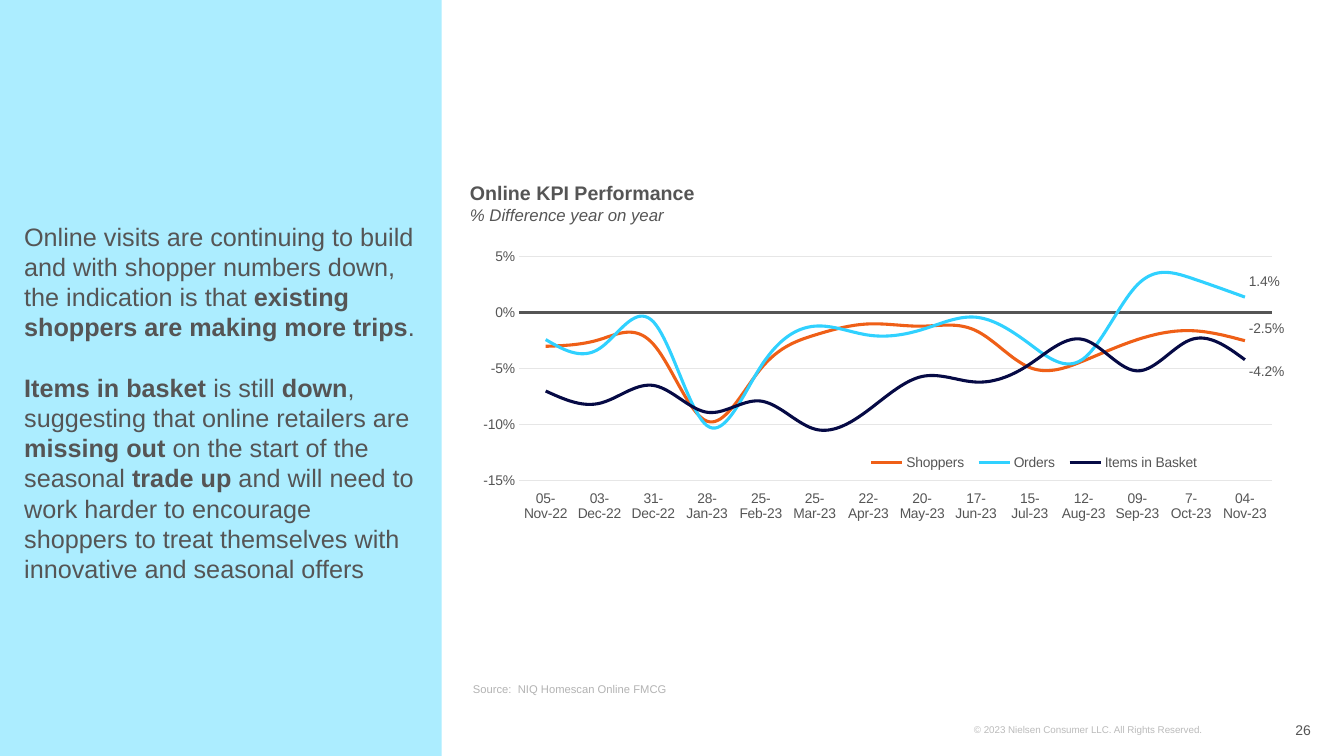
from lxml import etree
from pptx import Presentation
from pptx.chart.data import CategoryChartData
from pptx.dml.color import RGBColor
from pptx.enum.chart import XL_CHART_TYPE as CT, XL_LABEL_POSITION as LP
from pptx.enum.chart import XL_LEGEND_POSITION as LegendPos, XL_TICK_LABEL_POSITION as TickPos
from pptx.enum.chart import XL_TICK_MARK as Tick
from pptx.enum.shapes import MSO_SHAPE as Shape
from pptx.enum.text import MSO_ANCHOR as Anchor, PP_ALIGN as Align
from pptx.oxml.ns import qn
from pptx.util import Inches, Pt

FONT = "Arial"
W, H = 13.33, 7.5
COLORS = {
    "panel": "ACEDFF", "text": "555555", "source": "B3B3B3", "legal": "BBBBBB",
    "grid": "E6E6E6", "Shoppers": "EF5F17", "Orders": "30D1FF", "Items in Basket": "060A45",
}
DATES = [
    "05-Nov-22", "03-Dec-22", "31-Dec-22", "28-Jan-23", "25-Feb-23", "25-Mar-23", "22-Apr-23",
    "20-May-23", "17-Jun-23", "15-Jul-23", "12-Aug-23", "09-Sep-23", "7-Oct-23", "04-Nov-23",
]
KPIS = {
    "Shoppers": [-3.0, -2.4, -2.8, -9.7, -5.0, -2.0, -1.0, -1.2, -1.6, -4.9, -4.3, -2.4, -1.6, -2.5],
    "Orders": [-2.4, -3.2, -0.8, -10.1, -4.8, -1.2, -2.0, -1.5, -0.4, -2.8, -4.1, 2.5, 3.1, 1.4],
    "Items in Basket": [-7.0, -8.1, -6.5, -8.9, -7.9, -10.4, -8.7, -5.7, -6.2, -4.6, -2.4, -5.2, -2.4, -4.2],
}
LABEL_SHIFT = {"Shoppers": -0.03, "Orders": -0.04, "Items in Basket": 0.03}
MESSAGE = [
    [("Online visits are continuing to build and with shopper numbers down, the indication is that ", False),
     ("existing shoppers are making more trips", True), (".", False)],
    [("Items in basket ", True), ("is still ", False), ("down", True),
     (", suggesting that online retailers are ", False), ("missing out ", True),
     ("on the start of the seasonal ", False), ("trade up ", True),
     ("and will need to work harder to encourage shoppers to treat themselves with "
      "innovative and seasonal offers", False)],
]


def rgb(name):
    return RGBColor.from_string(COLORS[name])


def style(font, size, color="text", bold=False, italic=False):
    font.name, font.size = FONT, Pt(size)
    font.bold, font.italic = bold, italic
    font.color.rgb = rgb(color)


def add_box(s, x, y, w, h, anchor=Anchor.TOP):
    tf = s.shapes.add_textbox(*map(Inches, (x, y, w, h))).text_frame
    tf.word_wrap = True
    tf.vertical_anchor = anchor
    tf.margin_left = tf.margin_right = 0
    return tf


def add_lines(tf, *lines):
    for i, (text, size, look) in enumerate(lines):
        p = tf.add_paragraph() if i else tf.paragraphs[0]
        p.text = text
        style(p.font, size, **look)
    return tf


def add_message(s):
    tf = add_box(s, 0.24, 1.84, 3.9, 4, Anchor.BOTTOM)
    for i, parts in enumerate(MESSAGE):
        p = tf.add_paragraph() if i else tf.paragraphs[0]
        p.line_spacing = Pt(21.6)
        if i:
            p.space_before = Pt(21.6)
        for text, bold in parts:
            r = p.add_run()
            r.text = text
            style(r.font, 18, bold=bold)


def manual_layout(**values):
    layout = etree.Element(qn("c:layout"))
    manual = etree.SubElement(layout, qn("c:manualLayout"))
    for tag, val in values.items():
        etree.SubElement(manual, qn(f"c:{tag}")).set("val", str(val))
    return layout


def style_axes(chart):
    cat, val = chart.category_axis, chart.value_axis
    for axis in (cat, val):
        axis.major_tick_mark = axis.minor_tick_mark = Tick.NONE
        style(axis.tick_labels.font, 10)
    cat.tick_label_position = TickPos.LOW
    cat.format.line.color.rgb = rgb("text")
    cat.format.line.width = Pt(2)
    val.minimum_scale, val.maximum_scale, val.major_unit = -0.15, 0.05, 0.05
    val.tick_labels.number_format = "0%"
    val.tick_labels.number_format_is_linked = False
    val.format.line.fill.background()
    grid = val.major_gridlines.format.line
    grid.color.rgb, grid.width = rgb("grid"), Pt(0.75)


def label_last_point(ser):
    last = len(DATES) - 1
    label = ser.points[last].data_label
    style(label.font, 10)
    label.position = LP.RIGHT
    d = ser.data_labels._element.find(qn("c:dLbl"))
    d.find(qn("c:idx")).addnext(manual_layout(x=0, y=LABEL_SHIFT[ser.name]))
    labels = ser.data_labels
    labels.show_value = False
    labels.number_format, labels.number_format_is_linked = "0.0%", False


def add_kpi_chart(s):
    data = CategoryChartData(number_format="0.0%")
    data.categories = DATES
    for name, percents in KPIS.items():
        data.add_series(name, [round(v / 100, 3) for v in percents])
    box = map(Inches, (4.46, 1.65, 8.28, 3.84))
    chart = s.shapes.add_chart(CT.LINE, *box, data).chart
    chart.has_title = False
    style(chart.font, 10)
    style_axes(chart)
    plot = chart.plots[0]
    plot.vary_by_categories = False
    for ser in plot.series:
        ser.smooth = True
        ser.format.line.color.rgb = rgb(ser.name)
        ser.format.line.width = Pt(2.25)
        label_last_point(ser)
    area = chart._chartSpace.chart.plotArea
    for old in area.findall(qn("c:layout")):
        area.remove(old)
    area.insert(0, manual_layout(layoutTarget="inner", xMode="edge", yMode="edge",
                                 x=0.084, y=0.234, w=0.915, h=0.578))
    chart.has_legend = True
    legend = chart.legend
    legend.position = LegendPos.BOTTOM
    legend.include_in_layout = False
    style(legend.font, 10)
    el = legend._element
    for old in el.findall(qn("c:layout")):
        el.remove(old)
    el.find(qn("c:legendPos")).addnext(
        manual_layout(xMode="edge", yMode="edge", x=0.5, y=0.73, w=0.42, h=0.07))


def add_panel(s):
    sp = s.shapes.add_shape(Shape.RECTANGLE, 0, 0, Inches(4.38), Inches(H))
    sp.shadow.inherit = False
    sp.fill.solid()
    sp.fill.fore_color.rgb = rgb("panel")
    sp.line.fill.background()


def main():
    prs = Presentation()
    prs.slide_width, prs.slide_height = Inches(W), Inches(H)
    s = prs.slides.add_slide(prs.slide_layouts[6])
    add_panel(s)
    add_message(s)
    add_kpi_chart(s)
    add_lines(add_box(s, 4.66, 1.75, 8.32, 0.6),
              ("Online KPI Performance", 14, {"bold": True}),
              ("% Difference year on year", 12, {"italic": True}))
    add_lines(add_box(s, 4.69, 6.55, 8.31, 0.4, Anchor.BOTTOM),
              ("Source:  NIQ Homescan Online FMCG", 8, {"color": "source"}))
    add_lines(add_box(s, 9.66, 7.13, 2.84, 0.22),
              ("© 2023 Nielsen Consumer LLC. All Rights Reserved.", 7, {"color": "legal"}))
    page = add_lines(add_box(s, 12.01, 7.04, 0.99, 0.4, Anchor.MIDDLE), ("26", 10, {}))
    page.paragraphs[0].alignment = Align.RIGHT
    prs.save("out.pptx")


if __name__ == "__main__":
    main()
